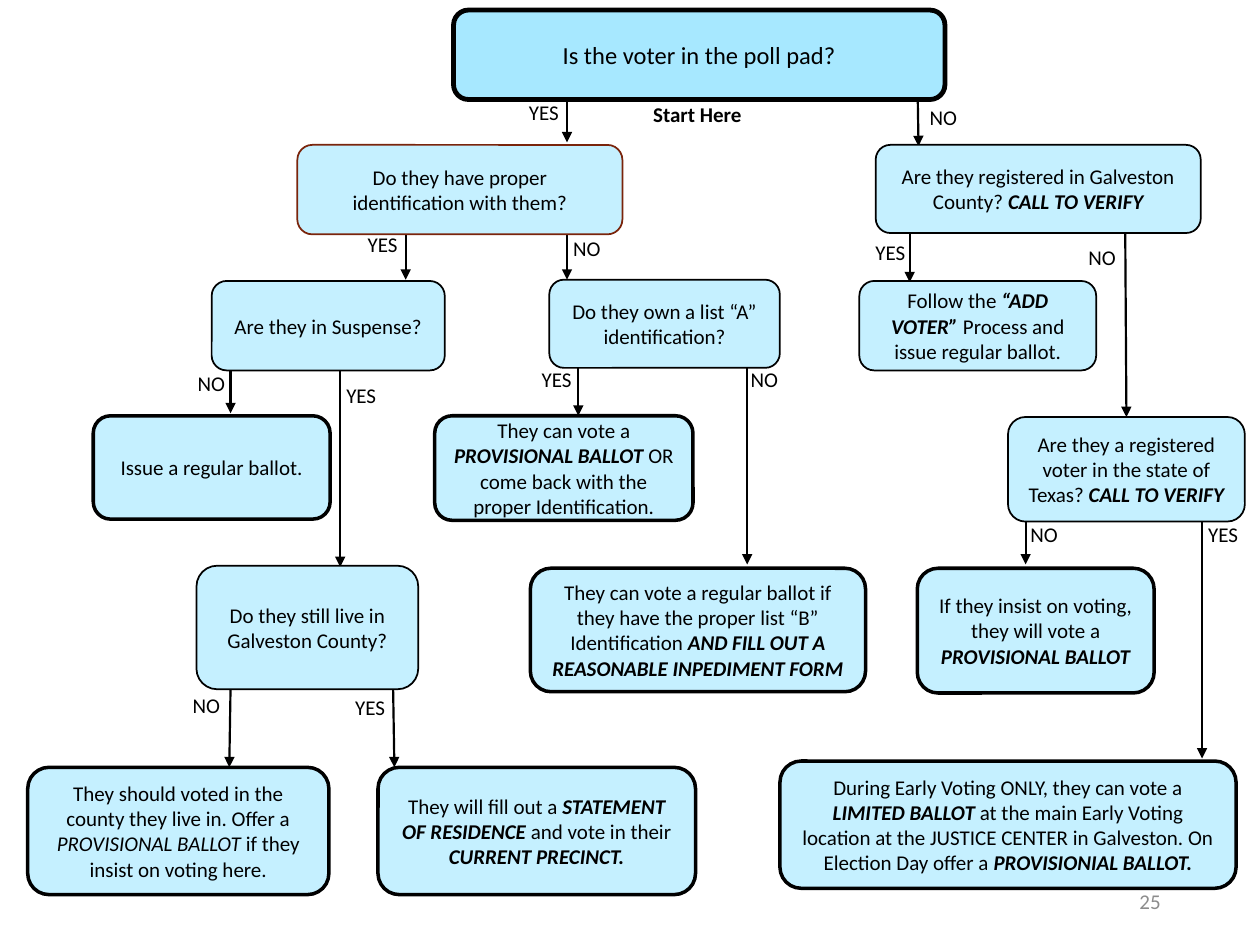
from dataclasses import dataclass
from typing import NamedTuple

from lxml.etree import SubElement
from pptx import Presentation
from pptx.dml.color import RGBColor as Rgb
from pptx.enum.shapes import MSO_CONNECTOR as Link, MSO_SHAPE as Kind
from pptx.enum.text import MSO_ANCHOR as Anchor, PP_ALIGN as Align
from pptx.oxml.ns import qn
from pptx.util import Inches, Pt


@dataclass(frozen=True)
class Theme:
    font: str = "Calibri"
    ink: str = "000000"
    gray: str = "8C8C8C"
    rust: str = "7A240B"
    sky: str = "A7E8FF"
    pale: str = "C5F0FF"
    body: float = 12
    head: float = 14
    thin: float = 1
    mid: float = 1.25
    thick: float = 2
    bold: float = 2.75


class Box(NamedTuple):
    col: float
    row: float
    wide: float
    tall: float
    text: str
    edge: float = Theme.thin
    line: str = Theme.ink
    fill: str = Theme.pale
    size: float = Theme.body
    strong: bool = True


class Arrow(NamedTuple):
    col: float
    row: float
    to_col: float
    to_row: float


class Label(NamedTuple):
    col: float
    row: float
    text: str
    wide: float = 6


LOOK = Theme()
WIDE, HIGH = Inches(10), Inches(7.5)
COLS, ROWS = 100, 75
ONE, TWO, THREE, FOUR, FIVE = 11.5, 22.3, 33, 45.1, 60.9

BOXES = [
    Box(36, 0.8, 39, 7.1, "Is the voter in the poll pad?",
        LOOK.bold, fill=LOOK.sky, size=LOOK.head),
    Box(23.6, ONE, 25.8, 7.1, "Do they have proper identification with them?",
        line=LOOK.rust),
    Box(69.5, ONE, 25.8, 7, "Are they registered in Galveston County? *CALL TO VERIFY*"),
    Box(16.8, TWO, 18.5, 7.1, "Are they in Suspense?"),
    Box(43.6, TWO - 0.1, 18.3, 7, "Do they own a list “A” identification?"),
    Box(68.2, TWO, 18.8, 7.1,
        "Follow the *“ADD VOTER”* Process and issue regular ballot."),
    Box(7.4, THREE, 18.8, 8.2, "Issue a regular ballot.", LOOK.thick),
    Box(34.5, THREE, 20.5, 8.3,
        "They can vote a *PROVISIONAL BALLOT *OR come back with the proper Identification.",
        LOOK.thick),
    Box(80, THREE + 0.1, 18.8, 8.3,
        "Are they a registered voter in the state of Texas? *CALL TO VERIFY*"),
    Box(15.6, FOUR - 0.2, 17.6, 9.8, "Do they still live in Galveston County?"),
    Box(42.1, FOUR, 26.6, 9.8,
        "They can vote a regular ballot if they have the proper list “B” "
        "Identification *AND FILL OUT A REASONABLE INPEDIMENT FORM*", LOOK.thick),
    Box(72.8, FOUR, 18.8, 9.9,
        "If they insist on voting, they will vote a *PROVISIONAL BALLOT*", LOOK.thick),
    Box(2.2, FIVE, 23.9, 10.1,
        "They should voted in the county they live in. Offer a "
        "*PROVISIONAL BALLOT *if they insist on voting here.",
        LOOK.thick, strong=False),
    Box(30, FIVE, 25.2, 10.1,
        "They will fill out a *STATEMENT OF RESIDENCE *and vote in their "
        "*CURRENT PRECINCT.*", LOOK.thick),
    Box(61.9, FIVE - 0.5, 36.2, 10.1,
        "During Early Voting ONLY, they can vote a *LIMITED BALLOT *at the main "
        "Early Voting location at the JUSTICE CENTER in Galveston. On Election Day "
        "offer a *PROVISIONIAL BALLOT.*", LOOK.thick),
]

ARROWS = [
    Arrow(45, 7.9, 45, 11.3), Arrow(72.8, 5.4, 72.9, 11.6),
    Arrow(32.2, 13.6, 32.2, 22.2), Arrow(45, 17, 45, 22.2),
    Arrow(72.2, 17.8, 72.2, 22.4), Arrow(89.3, 17.6, 89.4, 33.1),
    Arrow(18.3, 27.9, 18.3, 32.8), Arrow(27, 28.2, 27, 45),
    Arrow(45.9, 27.9, 45.9, 33), Arrow(59.3, 27.2, 59.3, 44.8),
    Arrow(81.4, 40.7, 81.4, 44.8), Arrow(95.4, 39.8, 95.4, 60.2),
    Arrow(18.3, 54.5, 18.2, 60.9), Arrow(31.2, 54.5, 31.3, 60.9),
]

LABELS = [
    Label(41, 7.4, "YES"), Label(72.8, 7.8, "NO"),
    Label(28.2, 17.9, "YES"), Label(44.5, 18.2, "NO"),
    Label(68.5, 18.5, "YES"), Label(85.4, 18.9, "NO"),
    Label(14.7, 28.9, "NO"), Label(26.5, 29.9, "YES"),
    Label(42, 28.6, "YES"), Label(58.6, 28.6, "NO"),
    Label(80.8, 40.9, "NO"), Label(94.9, 40.9, "YES", 7.4),
    Label(14.3, 54.5, "NO"), Label(27.2, 54.6, "YES"),
]


def across(cols: float) -> int:
    return round(WIDE * cols / COLS)


def down(rows: float) -> int:
    return round(HIGH * rows / ROWS)


def area(col: float, row: float, wide: float, tall: float) -> tuple:
    return across(col), down(row), across(wide), down(tall)


def write(shape, text: str, *, size: float = LOOK.body, color: str = LOOK.ink,
          align=Align.LEFT, anchor=Anchor.TOP, bold: bool = False,
          strong: bool = True) -> None:
    frame = shape.text_frame
    frame.word_wrap = True
    frame.vertical_anchor = anchor
    para = frame.paragraphs[0]
    para.alignment = align
    for spot, part in enumerate(text.split("*")):
        if not part:
            continue
        mark = spot % 2 == 1
        run = para.add_run()
        run.text = part
        font = run.font
        font.name, font.size = LOOK.font, Pt(size)
        font.color.rgb = Rgb.from_string(color)
        font.bold = bold or (mark and strong)
        font.italic = mark


def draw_box(slide, box: Box) -> None:
    shape = slide.shapes.add_shape(Kind.ROUNDED_RECTANGLE, *area(*box[:4]))
    shape.shadow.inherit = False
    shape.fill.solid()
    shape.fill.fore_color.rgb = Rgb.from_string(box.fill)
    shape.line.color.rgb = Rgb.from_string(box.line)
    shape.line.width = Pt(box.edge)
    write(shape, box.text, size=box.size, align=Align.CENTER,
          anchor=Anchor.MIDDLE, strong=box.strong)


def draw_arrow(slide, arrow: Arrow) -> None:
    line = slide.shapes.add_connector(
        Link.STRAIGHT, across(arrow.col), down(arrow.row),
        across(arrow.to_col), down(arrow.to_row))
    line.line.color.rgb = Rgb.from_string(LOOK.ink)
    line.line.width = Pt(LOOK.mid)
    props = line._element.spPr
    SubElement(props.find(qn("a:ln")), qn("a:tailEnd"), type="triangle")
    SubElement(props, qn("a:effectLst"))


def draw_label(slide, label: Label, tall: float = 3, **style) -> None:
    shape = slide.shapes.add_textbox(*area(label.col, label.row, label.wide, tall))
    write(shape, label.text, **style)


def main() -> None:
    deck = Presentation()
    deck.slide_width, deck.slide_height = WIDE, HIGH
    slide = deck.slides.add_slide(deck.slide_layouts.get_by_name("Blank"))
    draw_label(slide, Label(70.6, 69.5, "25", 22.5), 4, color=LOOK.gray,
               align=Align.RIGHT, anchor=Anchor.MIDDLE)
    for arrow in ARROWS:
        draw_arrow(slide, arrow)
    for label in LABELS:
        draw_label(slide, label)
    draw_label(slide, Label(47.6, 7.6, "Start Here", 15.5),
               align=Align.CENTER, bold=True)
    for box in BOXES:
        draw_box(slide, box)
    deck.save("out.pptx")


if __name__ == "__main__":
    main()
